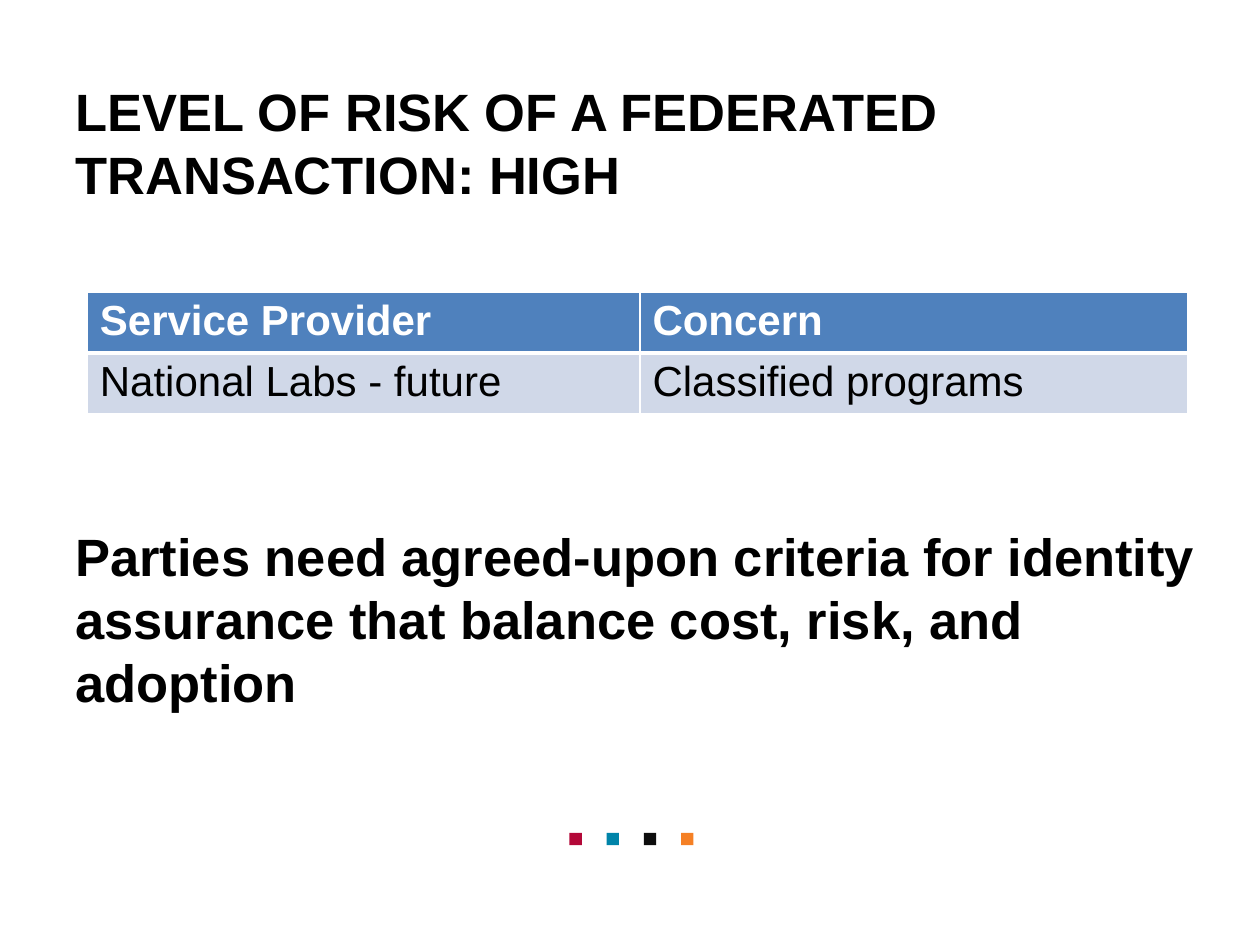
"""Build the slide on high-risk federated transactions."""
import pptx
import pptx.dml.color
import pptx.enum.shapes
import pptx.enum.text
import pptx.oxml
import pptx.oxml.ns
import pptx.util

Cm = pptx.util.Cm
Pt = pptx.util.Pt
COLOURS = {
    "text": "000000", "white": "FFFFFF", "header": "4F81BD", "body": "D0D8E8",
    "red": "B30838", "teal": "0084A9", "black": "0D0D0D", "orange": "F58025",
}


def write_text(frame, text, colour, formats):
    para = frame.paragraphs[0]
    span = para.add_run()
    span.text = text
    for name, value in formats.items():
        setattr(span.font, name, value)
    span.font.color.rgb = pptx.dml.color.RGBColor.from_string(COLOURS[colour])
    return para


def add_border(cell, side, points):
    line = pptx.oxml.parse_xml(
        f'<a:{side} {pptx.oxml.ns.nsdecls("a")} w="{Pt(points)}"><a:solidFill>'
        f'<a:srgbClr val="{COLOURS["white"]}"/></a:solidFill></a:{side}>'
    )
    cell._tc.get_or_add_tcPr().append(line)


deck = pptx.Presentation()
deck.slide_width, deck.slide_height = Cm(25.4), Cm(19.05)
slide = deck.slides.add_slide(deck.slide_layouts[6])

anchors = pptx.enum.text.MSO_ANCHOR
statements = [
    ("LEVEL OF RISK OF A FEDERATED TRANSACTION: HIGH", 1.27, 3.18, anchors.MIDDLE),
    ("Parties need agreed-upon criteria for identity assurance that balance cost, "
     "risk, and adoption", 10.44, 4.11, anchors.TOP),
]
for text, top, height, anchor in statements:
    box = slide.shapes.add_textbox(Cm(1.27), Cm(top), Cm(23.29), Cm(height))
    box.text_frame.word_wrap = True
    box.text_frame.vertical_anchor = anchor
    para = write_text(box.text_frame, text, "text",
                      {"name": "Arial", "size": Pt(30), "bold": True})
    para.line_spacing = Pt(36)

rows = [["Service Provider", "Concern"], ["National Labs - future", "Classified programs"]]
row_styles = [("header", "white", True, 3), ("body", "text", False, 1)]
row_height = Cm(1.18)
table = slide.shapes.add_table(
    2, 2, Cm(1.76), Cm(5.9), Cm(22.18), row_height * 2).table
for column, width in zip(table.columns, (11.14, 11.04)):
    column.width = Cm(width)

for row_index, (texts, style) in enumerate(zip(rows, row_styles)):
    fill, colour, bold, bottom = style
    top = 1 if row_index == 0 else 3
    for column_index, text in enumerate(texts):
        cell = table.cell(row_index, column_index)
        cell.margin_top = cell.margin_bottom = Cm(0.1)
        for side, points in {"lnL": 1, "lnR": 1, "lnT": top, "lnB": bottom}.items():
            add_border(cell, side, points)
        cell.fill.solid()
        cell.fill.fore_color.rgb = pptx.dml.color.RGBColor.from_string(COLOURS[fill])
        write_text(cell.text_frame, text, colour,
                   {"name": "Arial", "size": Pt(24), "bold": bold})

for index, colour in enumerate(("red", "teal", "black", "orange")):
    square = slide.shapes.add_shape(
        pptx.enum.shapes.MSO_SHAPE.RECTANGLE,
        Cm(11.48 + 0.75 * index), Cm(16.79), Cm(0.25), Cm(0.25))
    square.shadow.inherit = False
    square.fill.solid()
    square.fill.fore_color.rgb = pptx.dml.color.RGBColor.from_string(COLOURS[colour])
    square.line.fill.background()

deck.save("out.pptx")
